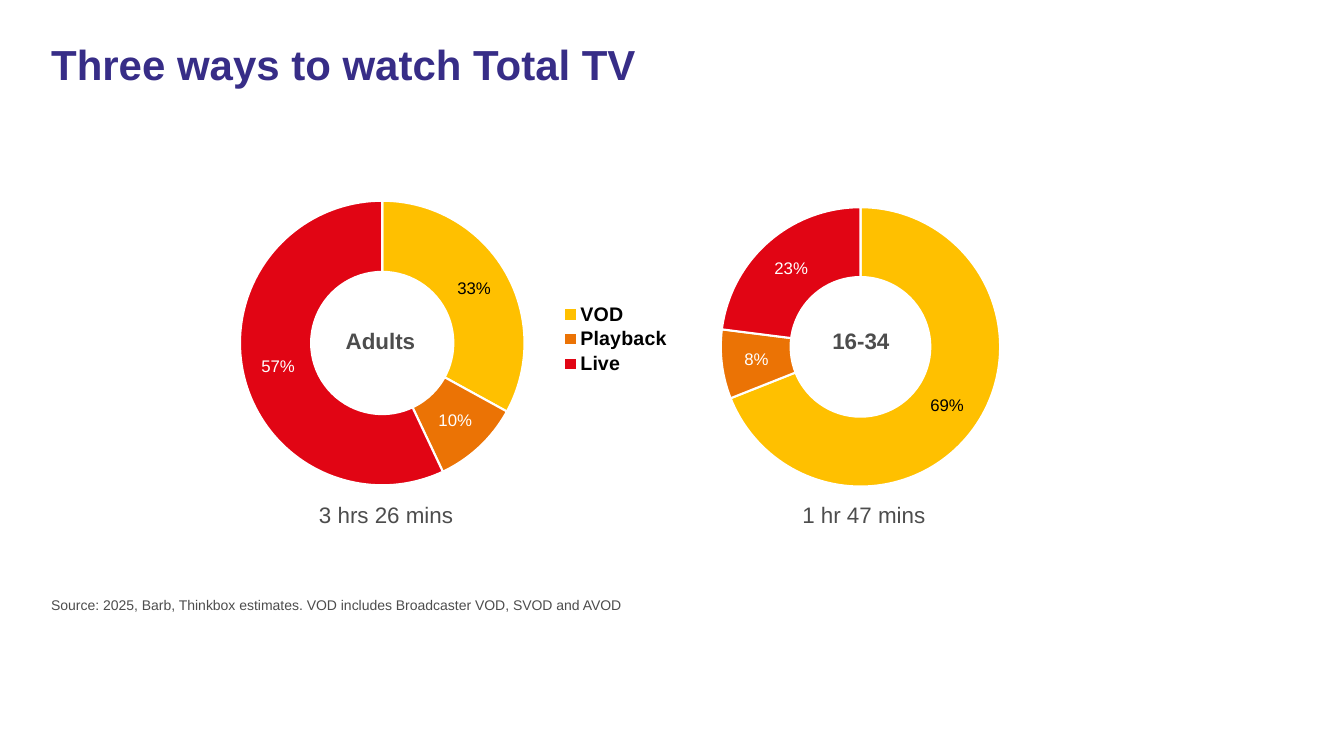
from dataclasses import dataclass

from lxml import etree
from pptx import Presentation
from pptx import util as u
from pptx.chart import data as chart_data
from pptx.dml.color import RGBColor
from pptx.enum import chart as chart_enum
from pptx.enum import text
from pptx.oxml import ns

FONT = "Arial"
GREY = "4D4D4D"
SLICE_COLOURS = ("FFC000", "EB7305", "E10514")


@dataclass
class Label:
    wording: str
    left: float
    top: float
    width: float
    height: float
    size: float
    colour: str = GREY
    bold: bool = False
    centred: bool = False
    line_spacing: float = 1.0


@dataclass
class Ring:
    left: float
    width: float
    categories: tuple[str, ...]
    values: tuple[int, ...]
    plot_area: tuple[float, float, float, float]
    legend_area: tuple[float, float, float, float] | None = None


LABELS = (
    Label("Three ways to watch Total TV", 1.04, 0.99, 31.5, 2.84, 30,
          "372D87", bold=True, line_spacing=0.9),
    Label("Source: 2025, Barb, Thinkbox estimates. VOD includes Broadcaster VOD, "
          "SVOD and AVOD", 1.04, 14.91, 31.5, 0.84, 10),
    Label("3 hrs 26 mins", 7.52, 12.5, 4.42, 0.94, 16, centred=True),
    Label("1 hr 47 mins", 19.56, 12.5, 4.42, 0.94, 16, centred=True),
    Label("Adults", 8.23, 8.13, 2.72, 0.94, 16, bold=True, centred=True),
    Label("16-34", 20.5, 8.13, 2.39, 0.94, 16, bold=True, centred=True),
)

RINGS = (
    Ring(5.46, 11.76, ("VOD", "Playback", "Live"), (33, 10, 57),
         (0.05, 0.13, 0.61, 0.78), (0.72, 0.41, 0.27, 0.2)),
    Ring(17.48, 12.37, ("1", "2", "3"), (69, 8, 23), (0.05, 0.17, 0.58, 0.72)),
)


def rgb(colour: str) -> RGBColor:
    return RGBColor.from_string(colour)


def style_font(font, size: float, colour: str, bold: bool = False) -> None:
    font.name = FONT
    font.size = u.Pt(size)
    font.bold = bold
    font.color.rgb = rgb(colour)


def make_layout(area: tuple[float, float, float, float], inner: bool = False):
    layout = etree.Element(ns.qn("c:layout"))
    manual = etree.SubElement(layout, ns.qn("c:manualLayout"))
    settings = [("layoutTarget", "inner")] if inner else []
    settings += [("xMode", "edge"), ("yMode", "edge")]
    settings += zip("xywh", map(str, area))
    for tag, value in settings:
        etree.SubElement(manual, ns.qn(f"c:{tag}")).set("val", value)
    return layout


def add_label(slide, label: Label) -> None:
    box = slide.shapes.add_textbox(u.Cm(label.left), u.Cm(label.top),
                                   u.Cm(label.width), u.Cm(label.height))
    frame = box.text_frame
    frame.word_wrap = True
    frame.text = label.wording
    paragraph = frame.paragraphs[0]
    paragraph.line_spacing = label.line_spacing
    if label.centred:
        paragraph.alignment = text.PP_ALIGN.CENTER
    style_font(paragraph.runs[0].font, label.size, label.colour, label.bold)


def add_legend(chart, area: tuple[float, float, float, float]) -> None:
    chart.has_legend = True
    legend = chart.legend
    legend.position = chart_enum.XL_LEGEND_POSITION.RIGHT
    legend.include_in_layout = False
    style_font(legend.font, 14, "000000", bold=True)
    legend_position = chart.element.find(".//" + ns.qn("c:legendPos"))
    for layout in legend_position.getparent().findall(ns.qn("c:layout")):
        layout.getparent().remove(layout)
    legend_position.addnext(make_layout(area))


def add_ring(slide, ring: Ring) -> None:
    ring_data = chart_data.CategoryChartData()
    ring_data.categories = ring.categories
    ring_data.add_series("Series 1", ring.values)
    chart = slide.shapes.add_chart(
        chart_enum.XL_CHART_TYPE.DOUGHNUT, u.Cm(ring.left), u.Cm(3.56),
        u.Cm(ring.width), u.Cm(9.78), ring_data).chart
    chart.has_title = False
    chart.has_legend = False
    style_font(chart.font, 10, "000000")

    plot_area = chart.element.find(".//" + ns.qn("c:plotArea"))
    for layout in plot_area.findall(ns.qn("c:layout")):
        plot_area.remove(layout)
    plot_area.insert(0, make_layout(ring.plot_area, inner=True))

    plot = chart.plots[0]
    plot.vary_by_categories = True
    series = plot.series[0]
    for index, colour in enumerate(SLICE_COLOURS):
        slice_format = series.points[index].format
        slice_format.fill.solid()
        slice_format.fill.fore_color.rgb = rgb(colour)
        slice_format.line.color.rgb = rgb("FFFFFF")
        slice_format.line.width = u.Pt(1.5)

    labels = series.data_labels
    labels.show_value = False
    labels.show_percentage = True
    labels.number_format = "0%"
    labels.number_format_is_linked = False
    style_font(labels.font, 12, "FFFFFF")
    style_font(series.points[0].data_label.font, 12, "000000")
    first_label = chart.element.find(".//" + ns.qn("c:dLbl"))
    first_label.find(ns.qn("c:showVal")).set("val", "0")
    first_label.find(ns.qn("c:showPercent")).set("val", "1")

    if ring.legend_area:
        add_legend(chart, ring.legend_area)


def main() -> None:
    presentation = Presentation()
    presentation.slide_width = u.Cm(33.87)
    presentation.slide_height = u.Cm(19.05)
    slide = presentation.slides.add_slide(presentation.slide_layouts[6])
    for ring in RINGS:
        add_ring(slide, ring)
    for label in LABELS:
        add_label(slide, label)
    presentation.save("out.pptx")


if __name__ == "__main__":
    main()
